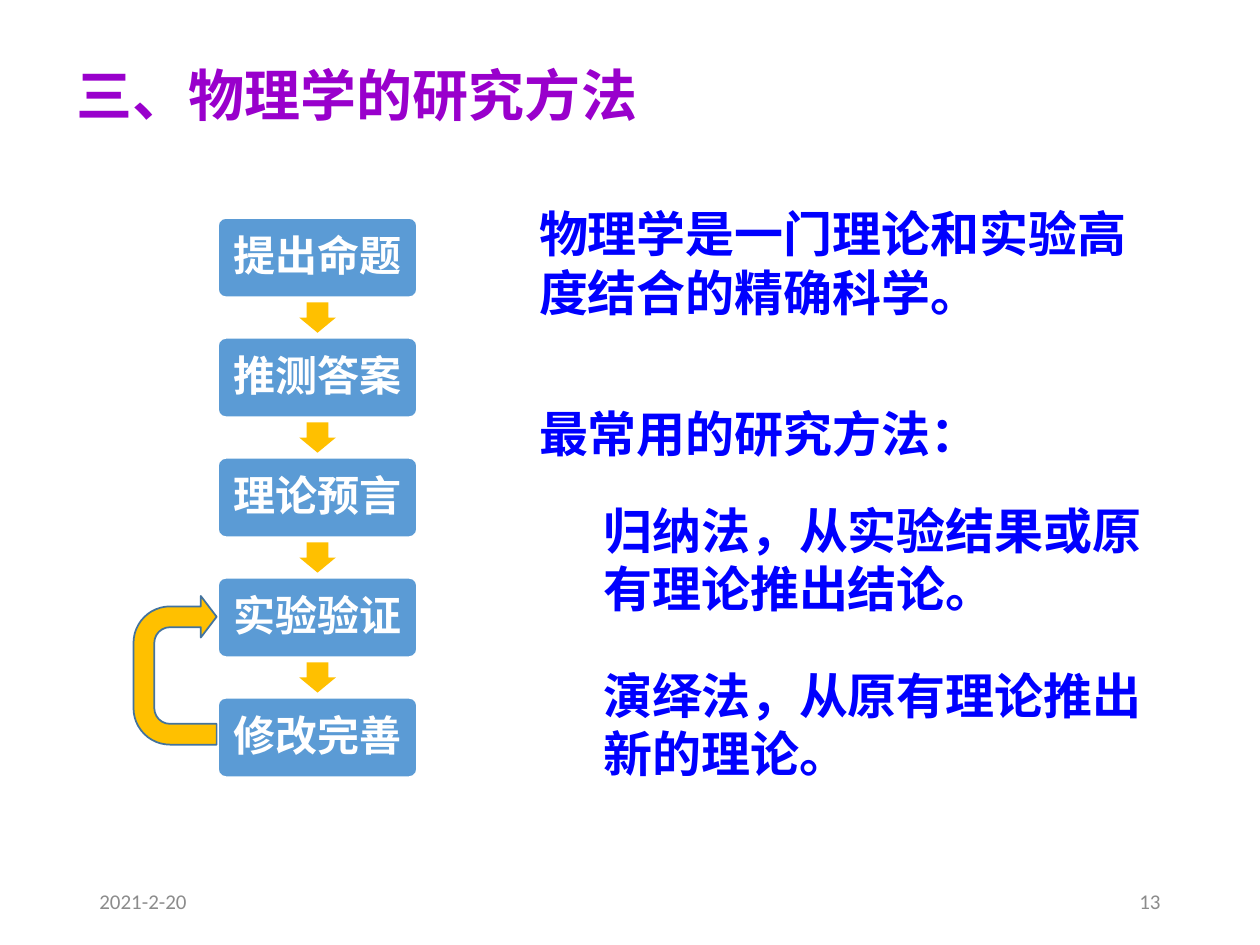
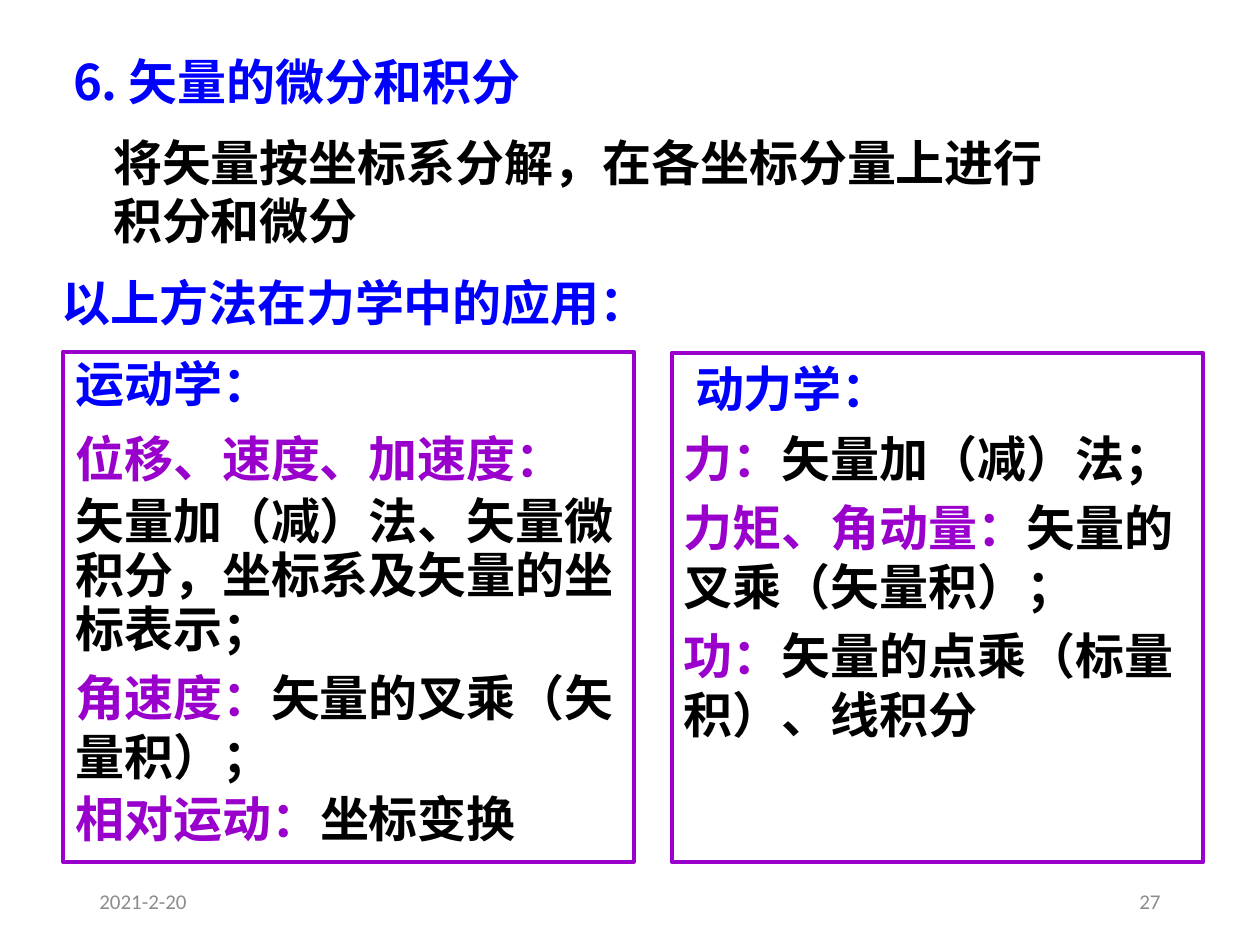
import pptx
import pptx.util
import pptx.dml.color
import pptx.enum.shapes
import pptx.enum.text
import pptx.oxml
import pptx.oxml.ns

COLORS = {
    "purple": "9900CC", "blue": "0000FF", "black": "000000", "white": "FFFFFF",
    "grey": "8C8C8C", "step": "5B9BD5", "arrow": "FFC000", "edge": "43739E",
}
CJK, LATIN = "Noto Sans CJK SC", "Calibri"
COLS, ROWS = 100, 75
DATE = "2021-2-20"
SHAPE = pptx.enum.shapes.MSO_SHAPE
ANCHOR = pptx.enum.text.MSO_ANCHOR
ALIGN = pptx.enum.text.PP_ALIGN


class Deck:
    def __init__(self):
        self.prs = pptx.Presentation()
        self.prs.slide_width = pptx.util.Inches(10)
        self.prs.slide_height = pptx.util.Inches(7.5)
        self.s = None

    def grid(self, col, row, cols, rows):
        cw, rh = self.prs.slide_width / COLS, self.prs.slide_height / ROWS
        return [int(n) for n in (col * cw, row * rh, cols * cw, rows * rh)]

    def color(self, name):
        return pptx.dml.color.RGBColor.from_string(COLORS[name])

    def style(self, r, color, size=28, font=CJK, bold=True):
        r.font.size = pptx.util.Pt(size)
        r.font.name = font
        r.font.bold = bold
        r.font.color.rgb = self.color(color)
        ea = pptx.oxml.parse_xml(
            f'<a:ea {pptx.oxml.ns.nsdecls("a")} typeface="{CJK}"/>')
        r.font._element.find(pptx.oxml.ns.qn("a:latin")).addnext(ea)

    def fill_text(self, tf, text, color, align=ALIGN.LEFT, anchor=ANCHOR.TOP, **font):
        tf.text = text
        tf.word_wrap = True
        tf.auto_size = pptx.enum.text.MSO_AUTO_SIZE.NONE
        tf.vertical_anchor = anchor
        p = tf.paragraphs[0]
        p.alignment = align
        self.style(p.runs[0], color, **font)

    def slide(self, title, place, number, color, size):
        self.s = self.prs.slides.add_slide(self.prs.slide_layouts[5])
        sp = self.s.shapes.title
        sp.left, sp.top, sp.width, sp.height = self.grid(*place)
        self.fill_text(sp.text_frame, title, color, size=size)
        for col, text, align in ((6.9, DATE, ALIGN.LEFT), (70.6, number, ALIGN.RIGHT)):
            self.text(text, (col, 69.5, 22.5, 4), "grey", align=align,
                      anchor=ANCHOR.MIDDLE, size=12, font=LATIN, bold=False)

    def text(self, text, place, color, **options):
        sp = self.s.shapes.add_textbox(*self.grid(*place))
        self.fill_text(sp.text_frame, text, color, **options)

    def shape(self, kind, place, fill=None, line=None, weight=1, adjust=()):
        sp = self.s.shapes.add_shape(kind, *self.grid(*place))
        sp.shadow.inherit = False
        if fill:
            sp.fill.solid()
            sp.fill.fore_color.rgb = self.color(fill)
        else:
            sp.fill.background()
        if line:
            sp.line.color.rgb = self.color(line)
            sp.line.width = pptx.util.Pt(weight)
        else:
            sp.line.fill.background()
        for i, value in enumerate(adjust):
            sp.adjustments[i] = value
        return sp

    def steps(self, names, col, row, cols, rows, pitch):
        head_w, head_h = 2.9, 2.4
        for i, name in enumerate(names):
            top = row + i * pitch
            sp = self.shape(SHAPE.ROUNDED_RECTANGLE, (col, top, cols, rows),
                            "step", "white", adjust=[0.1])
            self.fill_text(sp.text_frame, name, "white", ALIGN.CENTER, ANCHOR.MIDDLE,
                           size=24, font=LATIN)
            sp.text_frame.paragraphs[0].line_spacing = 0.9
            if i < len(names) - 1:
                gap_top = top + rows + (pitch - rows - head_h) / 2
                self.shape(SHAPE.DOWN_ARROW,
                           (col + (cols - head_w) / 2, gap_top, head_w, head_h),
                           "arrow", adjust=[0.6, 0.5])

    def panel(self, place, paragraphs):
        sp = self.shape(SHAPE.RECTANGLE, place, line="purple", weight=2.25)
        tf = sp.text_frame
        tf.word_wrap = True
        tf.vertical_anchor = ANCHOR.TOP
        for i, (before, exact, parts) in enumerate(paragraphs):
            p = tf.paragraphs[0] if i == 0 else tf.add_paragraph()
            p.alignment = ALIGN.LEFT
            p.space_before = pptx.util.Pt(before)
            if exact:
                p.line_spacing = pptx.util.Pt(exact)
            for text, color in parts:
                r = p.add_run()
                r.text = text
                self.style(r, color)


def methods(deck):
    deck.slide("三、物理学的研究方法", (5.1, 4.3, 60, 6.4), "13", "purple", 32)
    deck.steps(["提出命题", "推测答案", "理论预言", "实验验证", "修改完善"],
               17.3, 17.3, 15.8, 6.3, 9.52)
    loop = deck.shape(SHAPE.U_TURN_ARROW, (8, 49.9, 11.8, 6.6), "arrow", "edge",
                      adjust=[0.25, 0.25, 0.19, 0.44, 1])
    loop.rotation = 270
    for text, place in (
        ("物理学是一门理论和实验高度结合的精确科学。", (41.8, 15.7, 50, 10.4)),
        ("最常用的研究方法：", (41.8, 31.5, 40, 5.7)),
        ("归纳法，从实验结果或原有理论推出结论。", (46.9, 39.2, 47.6, 10.4)),
        ("演绎法，从原有理论推出新的理论。", (46.9, 52.3, 47.6, 10.4)),
    ):
        deck.text(text, place, "blue")


def vectors(deck):
    deck.slide("6. 矢量的微分和积分", (4.8, 3.6, 67.5, 5.7), "27", "blue", 28)
    deck.text("将矢量按坐标系分解，在各坐标分量上进行积分和微分",
              (8, 10, 77.6, 10.4), "black")
    deck.text("以上方法在力学中的应用：", (3.9, 21.1, 74, 5.7), "blue")
    deck.panel((5, 27.9, 45.3, 40.5), [
        (4.2, 31, [("运动学：", "blue")]),
        (12, 31, [("位移、速度、加速度：", "purple")]),
        (4.2, 31, [("矢量加（减）法、矢量微积分，坐标系及矢量的坐标表示；", "black")]),
        (6, None, [("角速度：", "purple"), ("矢量的叉乘（矢量积）；", "black")]),
        (4.2, 31, [("相对运动：", "purple"), ("坐标变换", "black")]),
    ])
    deck.panel((53.3, 28, 42.2, 40.4), [
        (6, None, parts) for parts in (
            [(" ", "black"), ("动力学：", "blue")],
            [("力：", "purple"), ("矢量加（减）法；", "black")],
            [("力矩、角动量：", "purple"), ("矢量的叉乘（矢量积）；", "black")],
            [("功：", "purple"), ("矢量的点乘（标量积）、线积分", "black")],
        )
    ])


def main():
    deck = Deck()
    methods(deck)
    vectors(deck)
    deck.prs.save("out.pptx")


if __name__ == "__main__":
    main()
